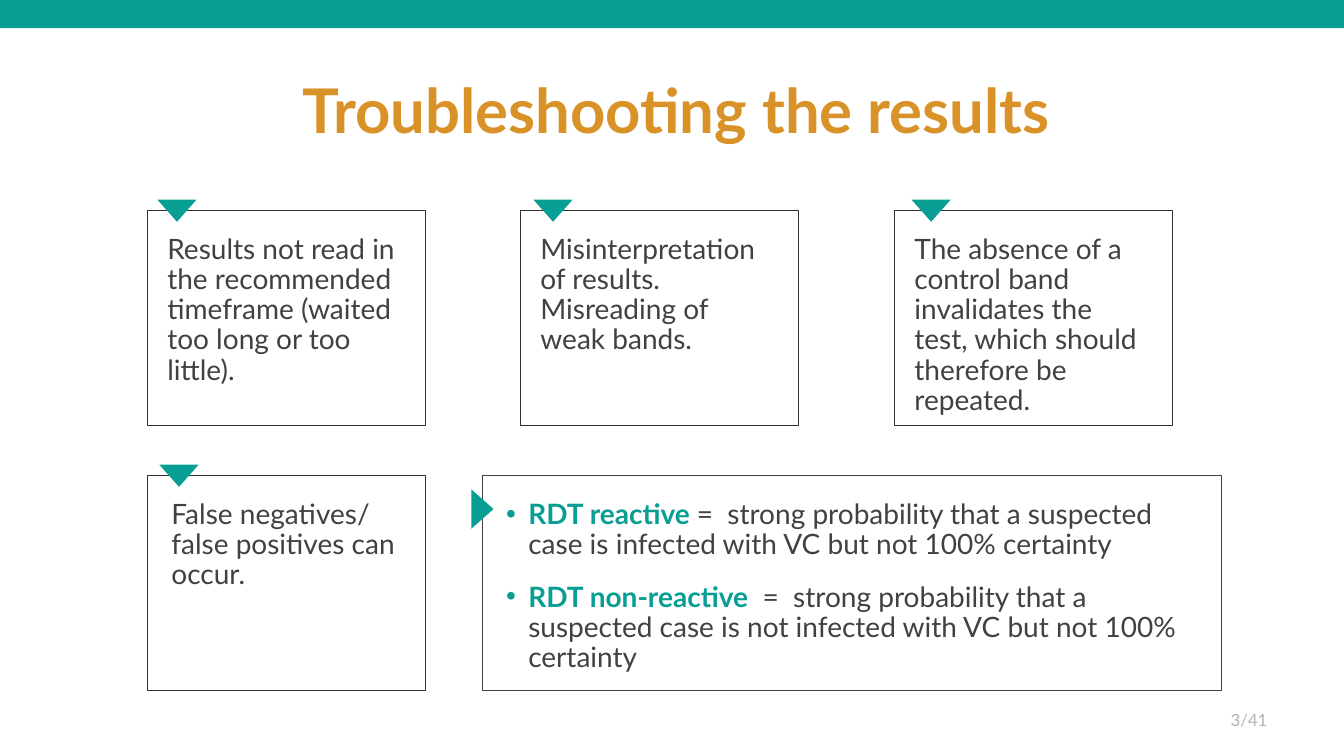
from lxml import etree
from pptx import Presentation
from pptx.dml.color import RGBColor
from pptx.enum.shapes import MSO_SHAPE
from pptx.enum.text import MSO_ANCHOR, PP_ALIGN
from pptx.oxml.ns import qn
from pptx.util import Inches, Pt

RECT, TRIANGLE = MSO_SHAPE.RECTANGLE, MSO_SHAPE.ISOSCELES_TRIANGLE
TOP, MIDDLE = MSO_ANCHOR.TOP, MSO_ANCHOR.MIDDLE
LEFT, CENTER, RIGHT = PP_ALIGN.LEFT, PP_ALIGN.CENTER, PP_ALIGN.RIGHT

TEAL = RGBColor(0x09, 0x9E, 0x93)
ORANGE = RGBColor(0xD9, 0x92, 0x28)
TEXT = RGBColor(0x41, 0x41, 0x41)
BORDER = RGBColor(0x31, 0x31, 0x31)
GRAY = RGBColor(0xB3, 0xB3, 0xB3)

BODY = {"size": Pt(20), "color": TEXT}
TERM = {"size": Pt(20), "color": TEAL, "bold": True}
TITLE = {"size": Pt(44), "color": ORANGE, "bold": True}
PAGE = {"size": Pt(12), "color": GRAY}

BOX_W, BOX_H = 2.76, 2.13
ROW_1, ROW_2 = 2.09, 4.72

# Box left and top, side inset, marker left, text
CARDS = [
    (1.46, ROW_1, 0.2, 1.56, "Results not read in the recommended timeframe "
     "(waited too long or too little)."),
    (5.16, ROW_1, 0.2, 5.29,
     "Misinterpretation of results. Misreading of weak bands."),
    (8.87, ROW_1, 0.2, 9.04, "The absence of a control band invalidates the "
     "test, which should therefore be repeated."),
    (1.46, ROW_2, 0.24, 1.58,
     "False negatives/\nfalse positives can occur."),
]
POINTS = [
    ("RDT reactive ", "=  strong probability that a suspected case is "
     "infected with VC but not 100% certainty"),
    ("RDT non-reactive", "  =  strong probability that a suspected case is "
     "not infected with VC but not 100% certainty"),
]


def set_all(target, values):
    for name, value in values.items():
        setattr(target, name, value)


def add_form(slide, kind, box, fill=None, line=None, turn=0):
    shape = slide.shapes.add_shape(kind, *map(Inches, box))
    shape.shadow.inherit = False
    shape.rotation = turn
    if fill is None:
        shape.fill.background()
    else:
        shape.fill.solid()
        shape.fill.fore_color.rgb = fill
    if line is None:
        shape.line.fill.background()
    else:
        shape.line.color.rgb = line
        shape.line.width = Pt(0.5)
    return shape


def add_mark(slide, left, top, turn=180):
    add_form(slide, TRIANGLE, (left, top, 0.39, 0.22), fill=TEAL, turn=turn)


def set_frame(shape, inset, anchor=TOP):
    """Set the left, top, right and bottom insets of the text."""
    frame = shape.text_frame
    sides = ("left", "top", "right", "bottom")
    set_all(frame, {"margin_" + side: Inches(gap)
                    for side, gap in zip(sides, inset)})
    set_all(frame, {"word_wrap": True, "vertical_anchor": anchor})
    return frame


def add_run(par, text, style):
    for i, part in enumerate(text.split("\n")):
        if i:
            par.add_line_break()
        run = par.add_run()
        run.text = part
        values = {"name": "Lato", "bold": False, **style}
        run.font.color.rgb = values.pop("color")
        set_all(run.font, values)


def set_par(par, runs, align=LEFT, **space):
    set_all(par, {"alignment": align, "line_spacing": 0.9, **space})
    for text, style in runs:
        add_run(par, text, style)


def add_bullet(par):
    props = par._p.get_or_add_pPr()
    props.set("marL", str(Inches(0.22)))
    props.set("indent", str(Inches(-0.22)))
    color = etree.SubElement(props, qn("a:buClr"))
    etree.SubElement(color, qn("a:srgbClr"), val=str(TEAL))
    etree.SubElement(props, qn("a:buFont"), typeface="Arial")
    etree.SubElement(props, qn("a:buChar"), char="•")


def add_label(slide, box, text, style, align):
    shape = slide.shapes.add_textbox(*map(Inches, box))
    frame = set_frame(shape, (0.1, 0.05, 0.1, 0.05), MIDDLE)
    set_par(frame.paragraphs[0], [(text, style)], align)


def add_card(slide, left, top, inset, mark, text):
    shape = add_form(slide, RECT, (left, top, BOX_W, BOX_H), line=BORDER)
    right = 0.2 if left < 2 and top == ROW_1 else 0.24
    frame = set_frame(shape, (inset, 0.24, right, 0.24))
    set_par(frame.paragraphs[0], [(text, BODY)], space_before=Pt(10))
    add_mark(slide, mark, top - 0.11)


def add_points(slide):
    shape = add_form(slide, RECT, (4.78, ROW_2, 7.33, BOX_H), line=TEXT)
    frame = set_frame(shape, (0.24,) * 4)
    for i, (term, text) in enumerate(POINTS):
        par = frame.add_paragraph() if i else frame.paragraphs[0]
        set_par(par, [(term, TERM), (text, BODY)],
                space_before=Pt(10), space_after=Pt(6))
        add_bullet(par)
    add_mark(slide, 4.59, 4.94, turn=90)


def main():
    deck = Presentation()
    set_all(deck, {"slide_width": Inches(13.33), "slide_height": Inches(7.5)})
    slide = deck.slides.add_slide(deck.slide_layouts[6])

    # Top band and title
    add_form(slide, RECT, (-0.08, -0.09, 13.5, 0.37), fill=TEAL)
    add_label(slide, (0.96, 0.4, 11.5, 1.45), "Troubleshooting the results",
              TITLE, CENTER)

    # Cards and the wide box
    for card in CARDS:
        add_card(slide, *card)
    add_points(slide)

    # Page number
    add_label(slide, (9.67, 6.95, 3, 0.4), "3/41", PAGE, RIGHT)
    deck.save("out.pptx")


if __name__ == "__main__":
    main()
